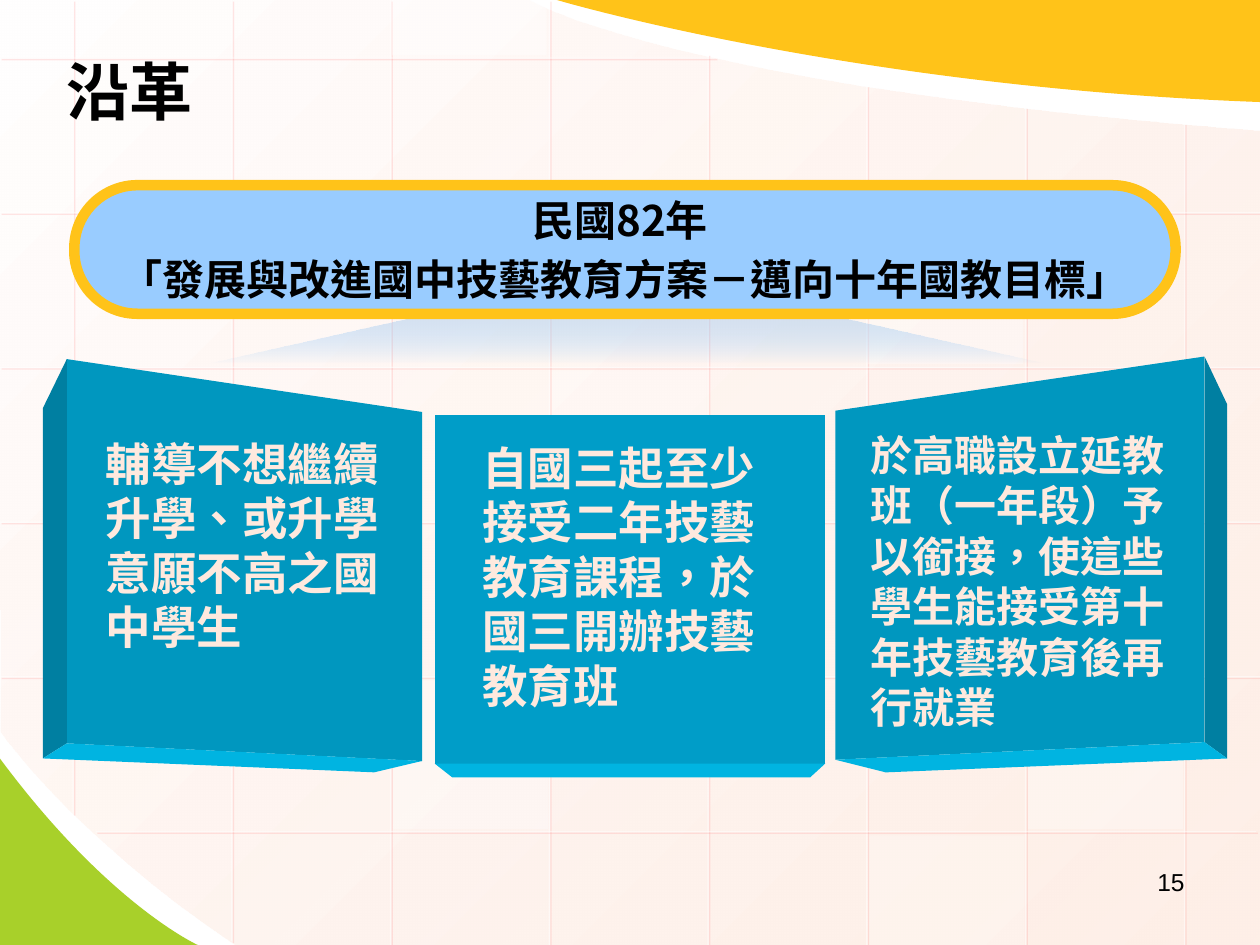
from lxml import etree
from pptx import Presentation
from pptx.dml.color import RGBColor
from pptx.enum.lang import MSO_LANGUAGE_ID
from pptx.enum.shapes import MSO_CONNECTOR, MSO_SHAPE
from pptx.enum.text import MSO_ANCHOR, PP_ALIGN
from pptx.oxml.ns import qn
from pptx.util import Inches, Pt

STRAIGHT = MSO_CONNECTOR.STRAIGHT
RECTANGLE, ROUNDED = MSO_SHAPE.RECTANGLE, MSO_SHAPE.ROUNDED_RECTANGLE
TRIANGLE = MSO_SHAPE.ISOSCELES_TRIANGLE
TOP, MIDDLE = MSO_ANCHOR.TOP, MSO_ANCHOR.MIDDLE
LEFT, CENTER, RIGHT = PP_ALIGN.LEFT, PP_ALIGN.CENTER, PP_ALIGN.RIGHT
TAIWAN = MSO_LANGUAGE_ID.TRADITIONAL_CHINESE
CJK_FONT = "Noto Sans CJK SC"

COLORS = {
    "white": "FFFFFF", "black": "000000", "pale": "FFFEFE", "peach": "FEE9DE",
    "green": "A8D02A", "gold": "FFC319", "grid_shadow": "FF7575",
    "sky": "99CCFF", "beam": "5CB1FE", "wing": "0097BF", "front": "009DC8",
    "side": "007FA1", "base": "00B4E1",
}

prs = Presentation()
prs.slide_width, prs.slide_height = Inches(10), Inches(7.5)
slide = prs.slides.add_slide(prs.slide_layouts[6])
shapes = slide.shapes


def paint(shape, stops, angle=0):
    """Fill with one (colour, opacity) stop, or with a gradient of two."""
    shape.shadow.inherit = False
    shape.line.fill.background()
    if len(stops) == 1:
        shape.fill.solid()
        targets = [shape.fill.fore_color]
    else:
        shape.fill.gradient()
        shape.fill.gradient_angle = angle
        targets = [stop.color for stop in shape.fill.gradient_stops]
    for target, (color, _) in zip(targets, stops):
        target.rgb = RGBColor.from_string(COLORS[color])
    fill_colors = shape._element.spPr.iter(qn("a:srgbClr"))
    for element, (_, opacity) in zip(list(fill_colors), stops):
        if opacity < 100:
            etree.SubElement(element, qn("a:alpha"), val=str(opacity * 1000))


def write(shape, lines, size, font, color, bold=True, align=LEFT, anchor=TOP, wrap=True):
    frame = shape.text_frame
    frame.word_wrap, frame.vertical_anchor = wrap, anchor
    for index, line in enumerate(lines):
        paragraph = frame.add_paragraph() if index else frame.paragraphs[0]
        paragraph.alignment = align
        if index:
            paragraph.space_before = Pt(size * 0.2)
        run = paragraph.add_run()
        run.text = line
        style = {"size": Pt(size), "bold": bold, "name": font, "language_id": TAIWAN}
        for key, value in style.items():
            setattr(run.font, key, value)
        run.font.color.rgb = RGBColor.from_string(COLORS[color])
        etree.SubElement(run._r.rPr, qn("a:ea"), typeface=CJK_FONT)


# Outlines: fill stops, points, and where each curve's three points begin
panel = ([("pale", 100), ("peach", 70)],
         [(10, 1.04), (10, 7.5), (1.87, 7.5), (0.54, 6.6), (0.01, 5.8), (0.01, 5.81),
          (0, 0), (4.2, 0), (4.2, 0.01), (5.36, 0.69), (10, 1.04)], (3, 8))
green_corner = ([("green", 100)],
                [(0, 6.02), (0, 7.5), (1.57, 7.5),
                 (1.57, 7.5), (0.86, 7.18), (0, 6.02)], (3,))
gold_corner = ([("gold", 100)],
               [(10, 0.81), (10, 0), (4.42, 0),
                (4.42, 0), (6.74, 0.69), (10, 0.81)], (3,))
faces = [
    ("front", [(3.45, 3.29), (6.55, 3.29), (6.55, 6.06), (3.45, 6.06)]),
    ("base", [(3.45, 6.06), (6.55, 6.06), (6.43, 6.17), (3.59, 6.17)]),
    ("wing", [(6.63, 3.26), (9.56, 2.83), (9.56, 5.89), (6.63, 6.03)]),
    ("side", [(9.56, 2.83), (9.74, 3.21), (9.74, 6.02), (9.56, 5.89)]),
    ("base", [(6.63, 6.03), (9.56, 5.89), (9.74, 6.02), (7.03, 6.13)]),
    ("wing", [(0.53, 2.85), (3.35, 3.27), (3.35, 6.04), (0.53, 5.9)]),
    ("side", [(0.53, 2.85), (0.34, 3.24), (0.34, 6.02), (0.53, 5.9)]),
    ("base", [(0.53, 5.9), (3.35, 6.04), (2.97, 6.13), (0.34, 6.02)]),
]
outlines = [panel, green_corner, gold_corner]
outlines += [([(color, 100)], points, ()) for color, points in faces]

# Background areas and the faces of the three blocks
areas = []
for stops, points, curve_starts in outlines:
    corners = [(Inches(x), Inches(y)) for x, y in points]
    builder = shapes.build_freeform(*corners[0])
    builder.add_line_segments(corners[1:])
    area = builder.convert_to_shape()
    segments = list(area._element.iter(qn("a:lnTo")))
    for start in curve_starts:
        controls = segments[start - 1:start + 2]
        curve = etree.Element(qn("a:cubicBezTo"))
        controls[0].addprevious(curve)
        for control in controls:
            curve.append(control[0])
            control.getparent().remove(control)
    paint(area, stops, 315)
    areas.append(area)

# Grid lines with a faint red shadow
column_spans = [(0, 6.46), (0, 7.47), (0, 7.5), (0, 7.5),
                (0.43, 7.5), (0.68, 7.5), (0.85, 7.5), (0.98, 7.5)]
row_spans = [(5.68, 0)] + [(10, 0)] * 4 + [(9.97, 0.76)]
grid = [(0.58 + 1.26 * i, top, 0.58 + 1.26 * i, bottom)
        for i, (top, bottom) in enumerate(column_spans)]
grid += [(start, 0.46 + 1.228 * i, end, 0.46 + 1.228 * i)
         for i, (start, end) in enumerate(row_spans)]
for ends in grid:
    rule = shapes.add_connector(STRAIGHT, *[Inches(v) for v in ends])
    rule.line.width = Pt(0.75)
    rule.line.color.rgb = RGBColor.from_string(COLORS["white"])
    properties = rule._element.spPr
    line_color = properties.find(".//" + qn("a:srgbClr"))
    etree.SubElement(line_color, qn("a:alpha"), val="50000")
    effects = etree.SubElement(properties, qn("a:effectLst"))
    shadow = etree.SubElement(effects, qn("a:outerShdw"), dist=str(Pt(1.4)),
                              dir="2700000", algn="ctr", rotWithShape="0")
    shadow_color = etree.SubElement(shadow, qn("a:srgbClr"), val=COLORS["grid_shadow"])
    etree.SubElement(shadow_color, qn("a:alpha"), val="35000")

# Lightened grid cells
for left, top, height, opacity in (
        (4.38, 2.94, 1.18, 25), (8.16, 5.4, 1.18, 30), (6.9, 6.63, 0.87, 20),
        (3.11, 0, 0.44, 40), (3.12, 5.4, 1.18, 30), (6.89, 1.71, 1.18, 30)):
    cell = shapes.add_shape(RECTANGLE, Inches(left), Inches(top), Inches(1.23), Inches(height))
    paint(cell, [("white", opacity)])

# Light beam under the banner
beam = shapes.add_shape(TRIANGLE, Inches(1.66), Inches(2.14), Inches(6.64), Inches(0.74))
paint(beam, [("peach", 100), ("beam", 0)], 270)

# Gold corner and blocks go in front of the grid
for area in areas[2:]:
    shapes._spTree.append(area._element)

# Banner
banner = shapes.add_shape(ROUNDED, Inches(0.59), Inches(1.47), Inches(8.74), Inches(1.02))
banner.adjustments[0] = 0.49
paint(banner, [("sky", 100)])
banner.line.color.rgb = RGBColor.from_string(COLORS["gold"])
banner.line.width = Pt(6)
write(banner, ["民國82年 ", "「發展與改進國中技藝教育方案－邁向十年國教目標」"], 24,
      CJK_FONT, "black", align=CENTER, anchor=MIDDLE, wrap=False)

# Block texts, title and page number
block_style = {"font": "Arial", "color": "peach"}
texts = [
    ((0.74, 3.41, 2.37, 1.84), "輔導不想繼續升學、或升學意願不高之國中學生", 26, block_style),
    ((3.73, 3.44, 2.53, 2.27), "自國三起至少接受二年技藝教育課程，於國三開辦技藝教育班",
     26, block_style),
    ((6.81, 3.36, 2.6, 2.5),
     "於高職設立延教班（一年段）予以銜接，使這些學生能接受第十年技藝教育後再行就業",
     24, block_style),
    ((0.43, 0.21, 1.57, 1.01), "沿革", 36,
     {"font": CJK_FONT, "color": "black", "anchor": MIDDLE}),
    ((7.17, 6.83, 2.33, 0.52), "15", 14,
     {"font": "Arial", "color": "black", "bold": False, "align": RIGHT}),
]
for place, words, size, style in texts:
    box = shapes.add_textbox(*[Inches(v) for v in place])
    write(box, [words], size, **style)

prs.save("out.pptx")
